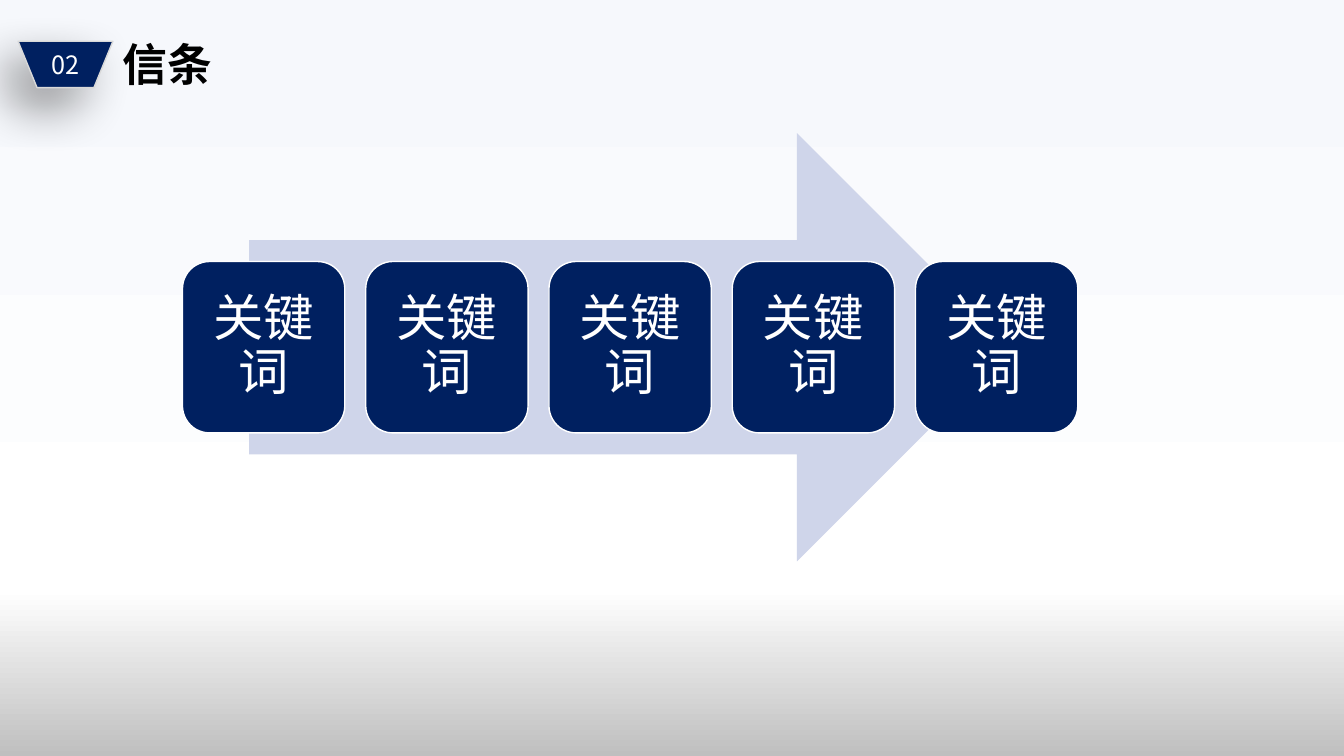
import copy

import pptx
import pptx.dml.color
import pptx.enum.shapes
import pptx.enum.text
import pptx.oxml
import pptx.oxml.ns
import pptx.util

Inches, Pt = pptx.util.Inches, pptx.util.Pt
RGBColor = pptx.dml.color.RGBColor
SHAPE = pptx.enum.shapes.MSO_SHAPE
ALIGN = pptx.enum.text.PP_ALIGN
ANCHOR = pptx.enum.text.MSO_ANCHOR

FONT = "Noto Sans CJK SC"
NAVY = RGBColor(0x00, 0x20, 0x60)
PALE_BLUE = RGBColor(0xCF, 0xD5, 0xEA)
LIGHT_GREY = RGBColor(0xD9, 0xD9, 0xD9)
WHITE = RGBColor(0xFF, 0xFF, 0xFF)
BLACK = RGBColor(0x00, 0x00, 0x00)
BACKGROUND_STOPS = [
    (0, RGBColor(0xF6, 0xF8, 0xFC)),
    (0.78, WHITE),
    (1, RGBColor(0xBF, 0xBF, 0xBF)),
]
KEYWORDS = ["关键词"] * 5


def paint_background(s):
    fill = s.background.fill
    fill.gradient()
    fill.gradient_angle = 270
    stop_list = s.element.xpath(".//p:bg//a:gsLst")[0]
    stop_list.append(copy.deepcopy(stop_list[-1]))
    for stop, (position, color) in zip(fill.gradient_stops, BACKGROUND_STOPS):
        stop.position = position
        stop.color.rgb = color


def add_shape(shapes, kind, left, top, width, height, fill, line=None):
    sp = shapes.add_shape(kind, Inches(left), Inches(top), Inches(width), Inches(height))
    sp.shadow.inherit = False
    sp.fill.solid()
    sp.fill.fore_color.rgb = fill
    if line is None:
        sp.line.fill.background()
    else:
        sp.line.color.rgb = line
        sp.line.width = Pt(1)
    return sp


def write(sp, text, size, color, bold=False, align=ALIGN.CENTER):
    """Set one paragraph of text, with the font for Latin and Chinese alike."""
    tf = sp.text_frame
    tf.word_wrap = True
    tf.text = text
    p = tf.paragraphs[0]
    p.alignment = align
    font = p.runs[0].font
    font.name, font.size, font.bold = FONT, Pt(size), bold
    font.color.rgb = color
    ea = pptx.oxml.parse_xml(
        f'<a:ea {pptx.oxml.ns.nsdecls("a")} typeface="{FONT}"/>')
    font._element.find(pptx.oxml.ns.qn("a:latin")).addnext(ea)
    return tf


def cast_shadow(sp, blur, distance, angle, opacity):
    effects = sp._element.spPr.find(pptx.oxml.ns.qn("a:effectLst"))
    effects.append(pptx.oxml.parse_xml(
        f'<a:outerShdw {pptx.oxml.ns.nsdecls("a")} blurRad="{Pt(blur)}" '
        f'dist="{Pt(distance)}" dir="{angle * 60000}" algn="tr" rotWithShape="0">'
        f'<a:srgbClr val="{BLACK}"><a:alpha val="{opacity * 1000}"/></a:srgbClr>'
        '</a:outerShdw>'))


def add_heading(s, left, top, number, title):
    box = s.shapes.add_textbox(
        Inches(left + 0.94), Inches(top), Inches(4.2), Inches(0.64))
    write(box, title, 32, BLACK, bold=True, align=ALIGN.LEFT)
    badge = add_shape(s.shapes, SHAPE.FLOWCHART_MANUAL_OPERATION,
                      left, top + 0.09, 0.94, 0.46, NAVY, LIGHT_GREY)
    cast_shadow(badge, blur=35, distance=20, angle=135, opacity=40)
    tf = write(badge, number, 18, WHITE)
    tf.vertical_anchor = ANCHOR.MIDDLE


def add_keyword_arrow(s, left, top, width, height, keywords):
    """Arrow with a row of evenly spaced keyword cards across it."""
    group = s.shapes.add_group_shape()
    inset = 0.66
    add_shape(group.shapes, SHAPE.RIGHT_ARROW,
              left + inset, top, width - 2 * inset, height, PALE_BLUE)
    card_width, card_height = 1.61, 0.4 * height
    pitch = (width - card_width) / (len(keywords) - 1)
    for i, keyword in enumerate(keywords):
        card = add_shape(group.shapes, SHAPE.ROUNDED_RECTANGLE,
                         left + i * pitch, top + (height - card_height) / 2,
                         card_width, card_height, NAVY, WHITE)
        tf = write(card, keyword, 36, WHITE)
        tf.vertical_anchor = ANCHOR.MIDDLE
        tf.margin_left = tf.margin_right = Inches(0.15)
        tf.margin_top = tf.margin_bottom = Inches(0.15)
        tf.paragraphs[0].line_spacing = 0.9


def main():
    prs = pptx.Presentation()
    prs.slide_width, prs.slide_height = Inches(13.33), Inches(7.5)
    s = prs.slides.add_slide(prs.slide_layouts[6])
    paint_background(s)
    add_heading(s, 0.18, 0.32, "02", "信条")
    add_keyword_arrow(s, 1.81, 1.32, 8.88, 4.25, KEYWORDS)
    prs.save("out.pptx")


if __name__ == "__main__":
    main()
